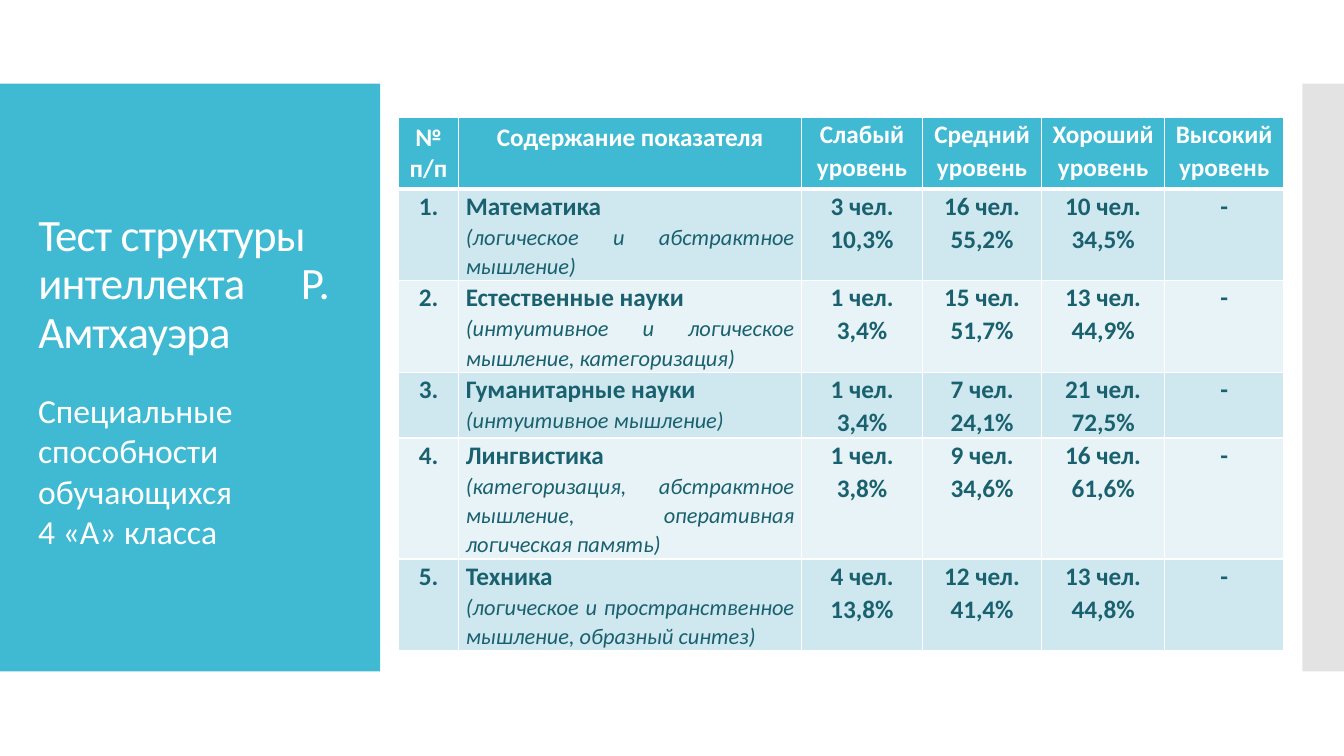
import dataclasses
import typing

import lxml.etree
import pptx
import pptx.dml.color
import pptx.enum.shapes
import pptx.enum.text
import pptx.oxml
import pptx.oxml.ns
import pptx.util

Cm = pptx.util.Cm
Pt = pptx.util.Pt
qn = pptx.oxml.ns.qn
ALIGN = pptx.enum.text.PP_ALIGN
FONT = "Calibri"
HUES = {"teal": "40BAD2", "grey": "C8C8C8", "white": "FFFFFF",
        "ink": "1A616F", "dark": "CFE7EE", "light": "E8F3F7"}


@dataclasses.dataclass
class Bar:
    left: float
    width: float
    hue: str
    alpha: int


@dataclasses.dataclass
class Style:
    size: int
    hue: str
    bold: bool = False
    slant: bool = False


@dataclasses.dataclass
class Field:
    name: str
    note: str
    marks: typing.List[str]
    height: float


BARS = [Bar(0, 9.58, "teal", 100), Bar(32.82, 1.05, "grey", 50)]
HEADS = ["№ п/п", "Содержание показателя", "Слабый уровень",
         "Средний уровень", "Хороший уровень", "Высокий уровень"]
WIDTHS = [1.52, 8.64, 3.05, 3.0, 3.1, 3.0]
FIELDS = [
    Field("Математика", "(логическое и абстрактное мышление)",
          ["3 чел.|10,3%", "16 чел.|55,2%", "10 чел.|34,5%", "-"], 2.3),
    Field("Естественные науки", "(интуитивное и логическое мышление, категоризация)",
          ["1 чел.|3,4%", "15 чел.|51,7%", "13 чел.|44,9%", "-"], 2.3),
    Field("Гуманитарные науки", "(интуитивное мышление)",
          ["1 чел.|3,4%", "7 чел.|24,1%", "21 чел.|72,5%", "-"], 1.63),
    Field("Лингвистика",
          "(категоризация, абстрактное мышление, оперативная логическая память)",
          ["1 чел.|3,8%", "9 чел.|34,6%", "16 чел.|61,6%", "-"], 3.05),
    Field("Техника", "(логическое и пространственное мышление, образный синтез)",
          ["4 чел.|13,8%", "12 чел.|41,4%", "13 чел.|44,8%", "-"], 2.3),
]
HEAD = Style(18, "white", bold=True)
MARK = Style(18, "ink", bold=True)
NOTE = Style(16, "ink", slant=True)


def paint(fill: typing.Any, hue: str) -> None:
    """Give a fill one solid colour."""
    fill.solid()
    fill.fore_color.rgb = pptx.dml.color.RGBColor.from_string(HUES[hue])


def add_run(para: typing.Any, text: str, style: Style) -> typing.Any:
    """Add one styled run to a paragraph."""
    run = para.add_run()
    run.text = text
    run.font.name = FONT
    run.font.size = Pt(style.size)
    run.font.bold = style.bold
    run.font.italic = style.slant
    run.font.color.rgb = pptx.dml.color.RGBColor.from_string(HUES[style.hue])
    return run


def add_bar(slide: typing.Any, bar: Bar) -> None:
    """Draw one side panel."""
    shape = slide.shapes.add_shape(
        pptx.enum.shapes.MSO_SHAPE.RECTANGLE,
        Cm(bar.left), Cm(2.11), Cm(bar.width), Cm(14.81))
    shape.shadow.inherit = False
    shape.line.fill.background()
    paint(shape.fill, bar.hue)
    if bar.alpha < 100:
        tone = shape._element.spPr.find(".//" + qn("a:srgbClr"))
        lxml.etree.SubElement(tone, qn("a:alpha"), val=str(bar.alpha * 1000))


def add_title(slide: typing.Any) -> None:
    """Place and fill the title above the panel."""
    title = slide.shapes.title
    slide.shapes._spTree.append(title._element)
    title.left, title.top = Cm(0.71), Cm(3.18)
    title.width, title.height = Cm(7.87), Cm(5.97)
    frame = title.text_frame
    frame.word_wrap = True
    frame.auto_size = pptx.enum.text.MSO_AUTO_SIZE.NONE
    frame.vertical_anchor = pptx.enum.text.MSO_ANCHOR.BOTTOM
    para = frame.paragraphs[0]
    para.alignment = ALIGN.LEFT
    para.line_spacing = 0.9
    stops = lxml.etree.SubElement(para._p.get_or_add_pPr(), qn("a:tabLst"))
    lxml.etree.SubElement(stops, qn("a:tab"), pos=str(Cm(6.62)), algn="l")
    run = add_run(para, "Тест структуры интеллекта\tР. Амтхауэра", Style(32, "white"))
    run.font._element.set("spc", "-60")


def add_theme(slide: typing.Any) -> None:
    """Write the subject below the title."""
    box = slide.shapes.add_textbox(Cm(0.71), Cm(9.7), Cm(7.87), Cm(6.45))
    box.text_frame.word_wrap = True
    para = box.text_frame.paragraphs[0]
    para.space_before = Pt(12)
    style = Style(24, "white")
    add_run(para, "Специальные способности обучающихся", style)
    para.add_line_break()
    add_run(para, "4 «А» класса", style)


def edge(cell: typing.Any, top: int, base: int) -> None:
    """Rule a cell in white, with widths in points."""
    props = cell._tc.get_or_add_tcPr()
    sides = {"lnL": 1, "lnR": 1, "lnT": top, "lnB": base}
    for spot, (tag, width) in enumerate(sides.items()):
        line = lxml.etree.Element(qn("a:" + tag), w=str(Pt(width)))
        fill = lxml.etree.SubElement(line, qn("a:solidFill"))
        lxml.etree.SubElement(fill, qn("a:srgbClr"), val=HUES["white"])
        props.insert(spot, line)


def fill_cell(cell: typing.Any, lines: typing.List[typing.Tuple[str, Style]],
              hue: str, align: typing.Any, tight: bool = True) -> None:
    """Write styled lines in a cell and colour it."""
    paint(cell.fill, hue)
    if tight:
        cell.margin_left = cell.margin_right = Cm(0.18)
        cell.margin_top = cell.margin_bottom = 0
    frame = cell.text_frame
    for spot, (text, style) in enumerate(lines):
        para = frame.add_paragraph() if spot else frame.paragraphs[0]
        para.alignment = align
        if tight:
            para.line_spacing = 1.07
        add_run(para, text, style)


def add_grid(slide: typing.Any) -> None:
    """Build the table of levels."""
    tall = [1.75] + [field.height for field in FIELDS]
    grid = slide.shapes.add_table(
        len(tall), len(WIDTHS), Cm(10.04), Cm(2.96),
        Cm(sum(WIDTHS)), Cm(sum(tall))).table
    for col, width in zip(grid.columns, WIDTHS):
        col.width = Cm(width)
    for row, height in zip(grid.rows, tall):
        row.height = Cm(height)
    for col, head in enumerate(HEADS):
        cell = grid.cell(0, col)
        fill_cell(cell, [(head, HEAD)], "teal", ALIGN.CENTER, col > 1)
        edge(cell, 1, 3)
    for row, field in enumerate(FIELDS, 1):
        hue = "dark" if row % 2 else "light"
        marks = [[(part, MARK) for part in mark.split("|")] for mark in field.marks]
        cells = [[(f"{row}.", MARK)], [(field.name, MARK), (field.note, NOTE)]] + marks
        for col, lines in enumerate(cells):
            cell = grid.cell(row, col)
            align = ALIGN.JUSTIFY if col == 1 else ALIGN.CENTER
            fill_cell(cell, lines, hue, align)
            edge(cell, 3 if row == 1 else 1, 1)


def main() -> None:
    """Build the slide and save it."""
    deck = pptx.Presentation()
    deck.slide_width, deck.slide_height = Cm(33.87), Cm(19.05)
    slide = deck.slides.add_slide(deck.slide_layouts[5])
    for bar in BARS:
        add_bar(slide, bar)
    add_title(slide)
    add_grid(slide)
    add_theme(slide)
    deck.save("out.pptx")


if __name__ == "__main__":
    main()
